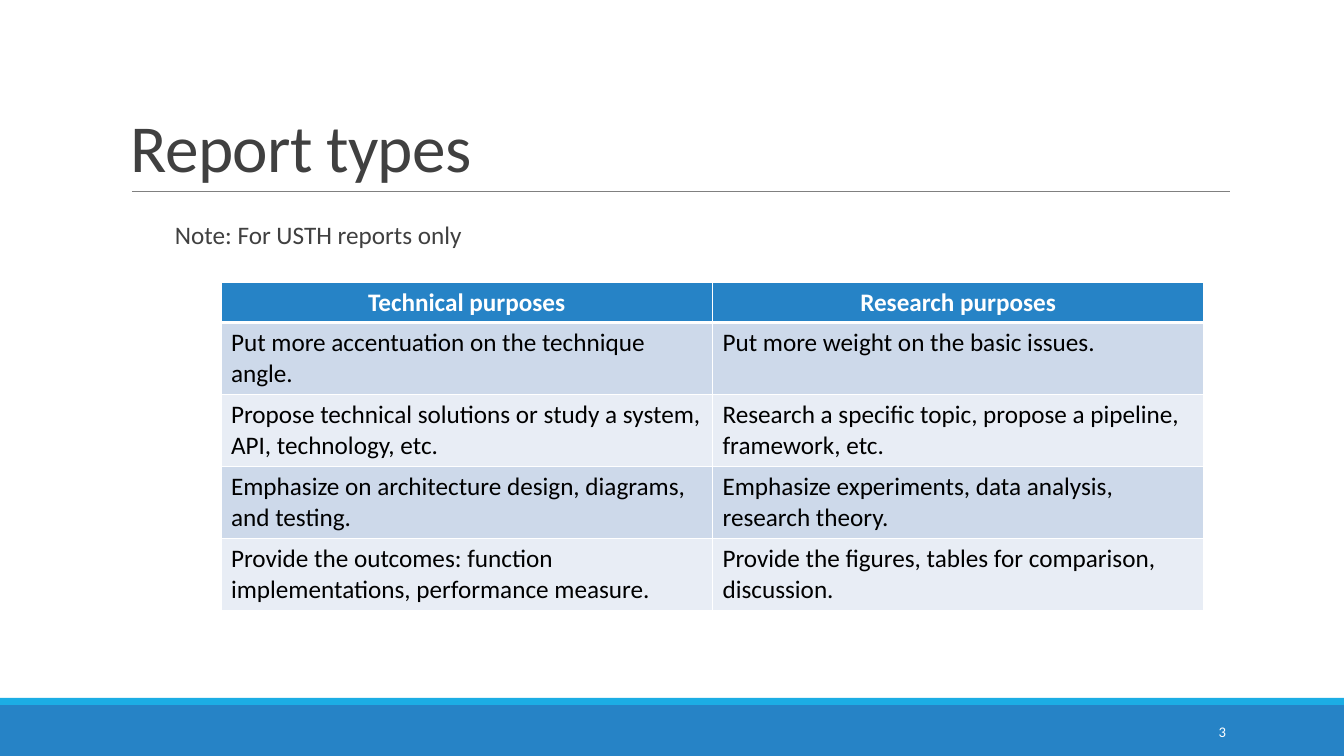
from lxml import etree
from pptx import Presentation
from pptx.dml.color import RGBColor
from pptx.enum.shapes import MSO_CONNECTOR, MSO_SHAPE
from pptx.enum.text import MSO_ANCHOR, PP_ALIGN
from pptx.oxml.ns import qn
from pptx.util import Pt

RECT, LINE = MSO_SHAPE.RECTANGLE, MSO_CONNECTOR.STRAIGHT
TOP, MID, BASE = MSO_ANCHOR.TOP, MSO_ANCHOR.MIDDLE, MSO_ANCHOR.BOTTOM
LEFT, CENTER, RIGHT = PP_ALIGN.LEFT, PP_ALIGN.CENTER, PP_ALIGN.RIGHT

WHITE = RGBColor(0xFF, 0xFF, 0xFF)
BLACK = RGBColor(0, 0, 0)
DARK = RGBColor(0x40, 0x40, 0x40)
GRAY = RGBColor(0x80, 0x80, 0x80)
BLUE = RGBColor(0x26, 0x83, 0xC6)
CYAN = RGBColor(0x1C, 0xAD, 0xE4)
BANDS = RGBColor(0xCD, 0xD9, 0xEA), RGBColor(0xE8, 0xED, 0xF5)

WIDE, HIGH = 1344, 756
ROWS = [
    ("Technical purposes", "Research purposes"),
    ("Put more accentuation on the technique angle.",
     "Put more weight on the basic issues."),
    ("Propose technical solutions or study a system, API, technology, etc.",
     "Research a specific topic, propose a pipeline, framework, etc."),
    ("Emphasize on architecture design, diagrams, and testing.",
     "Emphasize experiments, data analysis, research theory."),
    ("Provide the outcomes: function implementations, performance measure.",
     "Provide the figures, tables for comparison, discussion."),
]


def px(n):
    return round(n * 914400 / 100.8)


def write(frame, text, color, size, align=LEFT, bold=False):
    para = frame.paragraphs[0]
    para.alignment = align
    run = para.add_run()
    run.text = text
    look = {"name": "Calibri", "size": Pt(size), "bold": bold}
    for key, val in look.items():
        setattr(run.font, key, val)
    run.font.color.rgb = color
    return para, run


def add_text(slide, box, text, color, size, align=LEFT, anchor=TOP):
    frame = slide.shapes.add_textbox(*map(px, box)).text_frame
    frame.word_wrap = True
    frame.vertical_anchor = anchor
    return write(frame, text, color, size, align)


def add_bar(slide, box, color):
    bar = slide.shapes.add_shape(RECT, *map(px, box))
    bar.shadow.inherit = False
    bar.fill.solid()
    bar.fill.fore_color.rgb = color
    bar.line.fill.background()


def add_head(slide, box):
    x, y, w, h = box
    # Title, set tight above its rule
    para, run = add_text(slide, box, "Report types", DARK, 48, anchor=BASE)
    para.line_spacing = 0.85
    run.font._element.set("spc", "-50")
    # Rule
    rule = slide.shapes.add_connector(
        LINE, px(x + 11), px(y + h), px(x + w), px(y + h))
    rule.line.color.rgb = GRAY
    rule.line.width = Pt(0.5)
    etree.SubElement(rule._element.spPr, qn("a:effectLst"))


def add_edge(cell, side, width):
    edge = etree.SubElement(cell._tc.get_or_add_tcPr(), qn("a:ln" + side))
    edge.set("w", str(Pt(width)))
    fill = etree.SubElement(edge, qn("a:solidFill"))
    etree.SubElement(fill, qn("a:srgbClr")).set("val", str(WHITE))


def add_grid(slide, box, top):
    x, y, w, h = box
    cols = len(ROWS[0])
    grid = slide.shapes.add_table(len(ROWS), cols, *map(px, box)).table
    for col in grid.columns:
        col.width = px(w / cols)
    for r, texts in enumerate(ROWS):
        head = r == 0
        grid.rows[r].height = px(top if head else (h - top) / (len(ROWS) - 1))
        for c, text in enumerate(texts):
            cell = grid.cell(r, c)
            # Edges: a thick one parts the header from the body
            for side in "LRTB":
                thick = (side == "B" and head) or (side == "T" and r == 1)
                add_edge(cell, side, 3 if thick else 1)
            cell.fill.solid()
            cell.fill.fore_color.rgb = BLUE if head else BANDS[(r - 1) % 2]
            write(cell.text_frame, text, WHITE if head else BLACK, 18,
                  CENTER if head else LEFT, head)


def add_foot(slide, box):
    x, y, w, h = box
    strip = 7
    add_bar(slide, (x, y + strip, w, h - strip), BLUE)
    add_bar(slide, (x, y, w, strip), CYAN)
    # Page number
    add_text(slide, (x + w - 252, y + 14, 144, 40), "3", WHITE, 10.5,
             RIGHT, MID)


def main():
    deck = Presentation()
    deck.slide_width, deck.slide_height = px(WIDE), px(HIGH)
    slide = deck.slides.add_slide(deck.slide_layouts[6])
    add_foot(slide, (0, 698, WIDE, 58))
    add_head(slide, (121, 31, 1109, 160))
    add_text(slide, (165, 214, 983, 40), "Note: For USTH reports only",
             DARK, 18)
    add_grid(slide, (221, 282, 983, 328), 40)
    deck.save("out.pptx")


if __name__ == "__main__":
    main()
